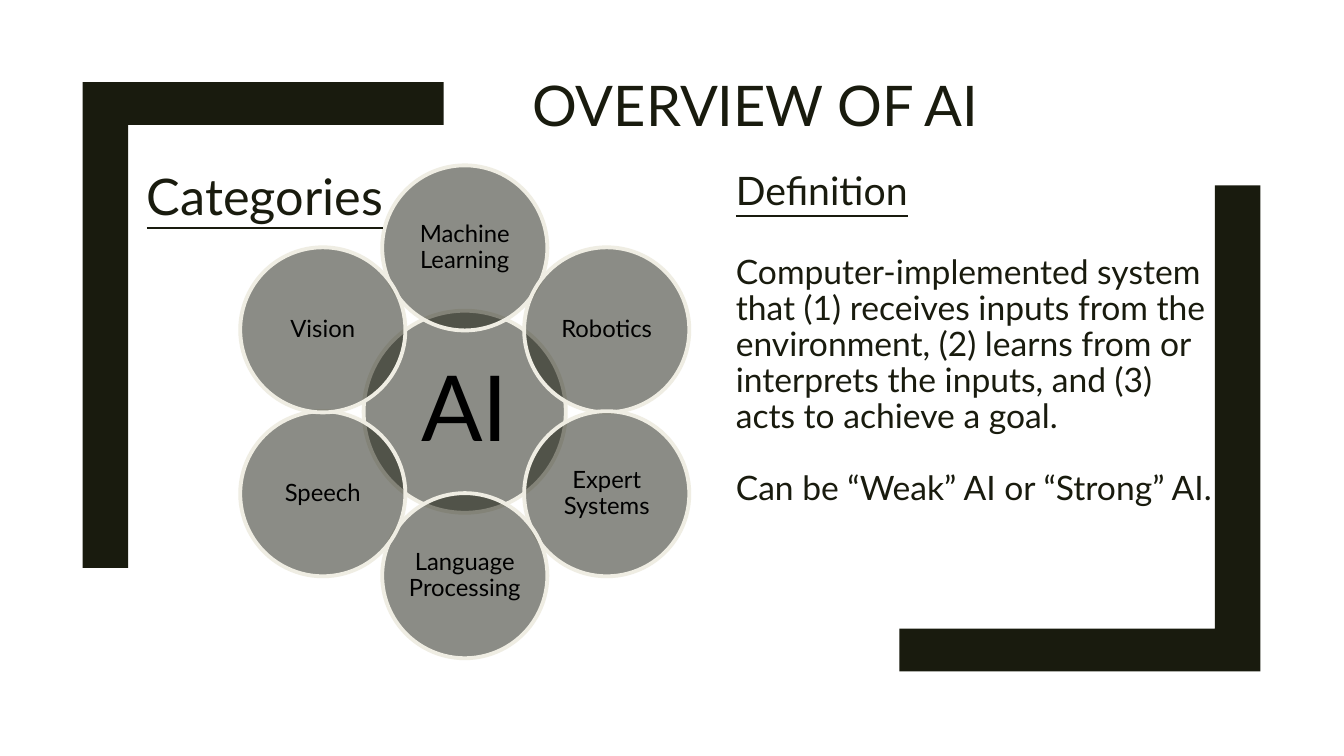
import math

import pptx
import pptx.dml.color
import pptx.enum.shapes
import pptx.enum.text
import pptx.oxml
import pptx.oxml.ns
import pptx.util

RGBColor = pptx.dml.color.RGBColor
INK = RGBColor(0x19, 0x1B, 0x0E)
CREAM = RGBColor(0xEF, 0xED, 0xE3)
BLACK = RGBColor(0, 0, 0)
FONT = "Lato"

WIDTH, HEIGHT = pptx.util.Inches(13.33), pptx.util.Inches(7.5)
COL, ROW = WIDTH / 100, HEIGHT / 100

CATEGORIES = ["Machine Learning", "Robotics", "Expert Systems",
              "Language Processing", "Speech", "Vision"]
DEFINITION = [  # text, size, underline, space before
    ("Definition", 28, True, 0),
    ("Computer-implemented system that (1) receives inputs from the "
     "environment, (2) learns from or interprets the inputs, and (3) acts "
     "to achieve a goal.", 24, False, 30),
    ("Can be “Weak” AI or “Strong” AI.", 24, False, 25.6),
]


def grid_box(left, top, cols, rows):
    """Turn grid columns and rows into left, top, width and height in EMU."""
    return int(left * COL), int(top * ROW), int(cols * COL), int(rows * ROW)


def style_paragraph(p, size, color, underline=False, before=0, spacing=0.89):
    p.line_spacing = spacing
    p.space_before = pptx.util.Pt(before)
    for r in p.runs:
        r.font.name = FONT
        r.font.size = pptx.util.Pt(size)
        r.font.color.rgb = color
        r.font.underline = underline


def add_text(s, box, lines, anchor=pptx.enum.text.MSO_ANCHOR.TOP):
    tf = s.shapes.add_textbox(*box).text_frame
    tf.word_wrap = True
    tf.vertical_anchor = anchor
    for i, (text, size, underline, before) in enumerate(lines):
        p = tf.add_paragraph() if i else tf.paragraphs[0]
        p.text = text
        style_paragraph(p, size, INK, underline, before)


def add_bracket(s, box, flipped=False):
    """Draw a corner at the lower right of the box, or upper left if flipped."""
    left, top, width, height = box
    inner_x, inner_y = 0.874, 0.912
    corners = [(inner_x, 0), (1, 0), (1, 1), (0, 1), (0, inner_y),
               (inner_x, inner_y)]
    if flipped:
        corners = [(1 - x, 1 - y) for x, y in corners]
    points = [(int(left + x * width), int(top + y * height))
              for x, y in corners]
    builder = s.shapes.build_freeform(*points[0], scale=1.0)
    builder.add_line_segments(points[1:], close=True)
    sp = builder.convert_to_shape()
    sp.shadow.inherit = False
    sp.fill.solid()
    sp.fill.fore_color.rgb = INK
    sp.line.fill.background()


def add_circle(s, x, y, diameter, text, size):
    """Draw a half-transparent labelled circle centred on x, y."""
    sp = s.shapes.add_shape(pptx.enum.shapes.MSO_SHAPE.OVAL,
                            int(x - diameter / 2), int(y - diameter / 2),
                            int(diameter), int(diameter))
    sp.shadow.inherit = False
    sp.fill.solid()
    sp.fill.fore_color.rgb = INK
    color = sp.fill._xPr.find(".//" + pptx.oxml.ns.qn("a:srgbClr"))
    color.append(pptx.oxml.parse_xml(
        f'<a:alpha {pptx.oxml.ns.nsdecls("a")} val="50000"/>'))
    sp.line.color.rgb = CREAM
    sp.line.width = pptx.util.Pt(2.75)
    tf = sp.text_frame
    tf.word_wrap = True
    tf.vertical_anchor = pptx.enum.text.MSO_ANCHOR.MIDDLE
    tf.margin_left = tf.margin_right = tf.margin_top = tf.margin_bottom = 0
    p = tf.paragraphs[0]
    p.text = text
    p.alignment = pptx.enum.text.PP_ALIGN.CENTER
    style_paragraph(p, size, BLACK, spacing=0.9)


def add_flower(s, box, core, petals):
    """Ring the core circle with petals, clockwise from the top."""
    left, top, width, height = box
    x, y = left + width / 2, top + height / 2
    petal = 0.335 * height
    ring = (height - petal) / 2
    add_circle(s, x, y, 0.41 * height, core, 65)
    for i, label in enumerate(petals):
        angle = 2 * math.pi * i / len(petals)
        add_circle(s, x + ring * math.sin(angle), y - ring * math.cos(angle),
                   petal, label, 17)


def build_overview(s):
    add_bracket(s, grid_box(66.92, 24.53, 26.86, 64.27))
    add_bracket(s, grid_box(6.15, 10.85, 26.86, 64.27), flipped=True)
    add_text(s, grid_box(38.86, 8.93, 61.14, 10),
             [("OVERVIEW OF AI", 40, False, 0)],
             pptx.enum.text.MSO_ANCHOR.BOTTOM)
    add_flower(s, grid_box(17.85, 21.87, 33.46, 65.2), "AI", CATEGORIES)
    add_text(s, grid_box(54.01, 22.13, 37.36, 58.4), DEFINITION)
    add_text(s, grid_box(10.2, 22.13, 21.68, 12.13),
             [("Categories", 36, True, 0)])


def main():
    prs = pptx.Presentation()
    prs.slide_width, prs.slide_height = WIDTH, HEIGHT
    build_overview(prs.slides.add_slide(prs.slide_layouts[6]))
    prs.save("out.pptx")


if __name__ == "__main__":
    main()
